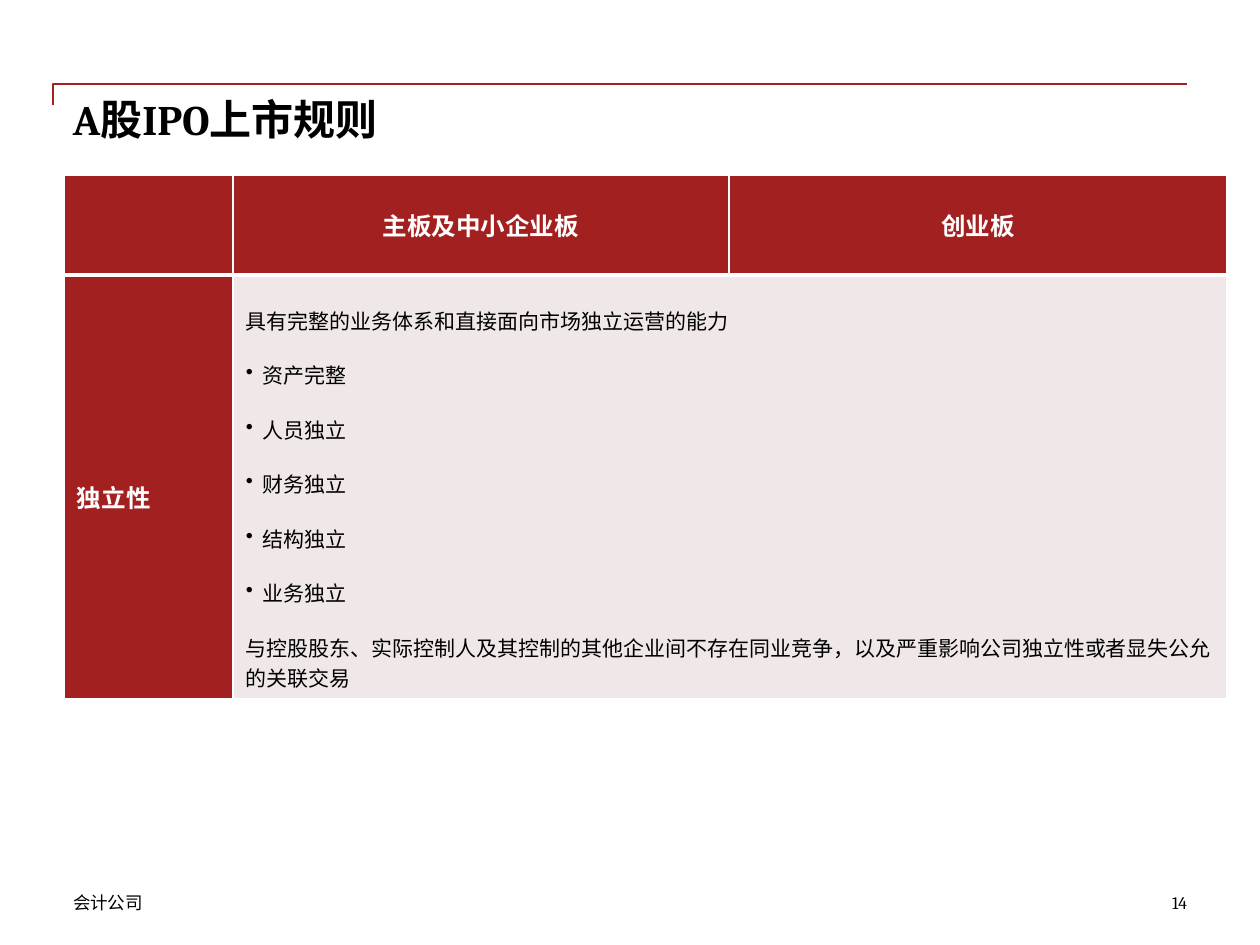
import pptx
import pptx.dml.color
import pptx.enum.text
import pptx.oxml
import pptx.oxml.ns
import pptx.util

PX = 914400 // 126
COLORS = {"red": "A32020", "pale": "F0E8E8", "white": "FFFFFF", "black": "000000"}
LATIN, ASIAN = "Cambria", "Noto Sans CJK SC"
ALIGN = pptx.enum.text.PP_ALIGN
ANCHOR = pptx.enum.text.MSO_ANCHOR
COLUMNS, ROWS = (169, 496, 498), (100, 424)
INDEPENDENCE = ("资产完整", "人员独立", "财务独立", "结构独立", "业务独立")


def px(count):
    return pptx.util.Emu(count * PX)


def rgb(name):
    return pptx.dml.color.RGBColor.from_string(COLORS[name])


def add_xml(parent, tag, content="", **attributes):
    values = "".join(f' {key}="{value}"' for key, value in attributes.items())
    namespace = pptx.oxml.ns.nsdecls("a")
    parent.append(pptx.oxml.parse_xml(f"<a:{tag} {namespace}{values}>{content}</a:{tag}>"))


def write(para, text, size=12, color="black", bold=False, align=ALIGN.LEFT, before=0, bullet=False):
    para.alignment = align
    para.space_before = px(before)
    if bullet:
        properties = para._p.get_or_add_pPr()
        properties.set("marL", str(px(17)))
        properties.set("indent", str(px(-17)))
        add_xml(properties, "buChar", char="•")
    span = para.add_run()
    span.text = text
    span.font.size = pptx.util.Pt(size)
    span.font.bold = bold
    span.font.color.rgb = rgb(color)
    span.font.name = LATIN
    add_xml(span.font._element, "ea", typeface=ASIAN)


def add_text(page, left, top, width, height, text, **style):
    box = page.shapes.add_textbox(px(left), px(top), px(width), px(height))
    frame = box.text_frame
    frame.word_wrap = True
    frame.margin_left = frame.margin_right = frame.margin_top = frame.margin_bottom = 0
    write(frame.paragraphs[0], text, **style)


def add_corner_rule(page):
    builder = page.shapes.build_freeform(53, 105, scale=PX)
    builder.add_line_segments([(53, 84), (1187, 84)], close=False)
    rule = builder.convert_to_shape()
    rule.shadow.inherit = False
    rule.fill.background()
    rule.line.color.rgb = rgb("red")
    rule.line.width = pptx.util.Pt(1)


def format_cell(cell, fill, bottom_width, margin_top=6):
    cell.margin_left = cell.margin_right = px(13)
    cell.margin_top, cell.margin_bottom = px(margin_top), px(6)
    properties = cell._tc.get_or_add_tcPr()
    line = f'<a:solidFill><a:srgbClr val="{COLORS["white"]}"/></a:solidFill>'
    for side in ("lnL", "lnR", "lnT", "lnB"):
        width = bottom_width if side == "lnB" else 1
        add_xml(properties, side, line, w=pptx.util.Pt(width))
    cell.fill.solid()
    cell.fill.fore_color.rgb = rgb(fill)


def add_rules_table(page):
    frame = page.shapes.add_table(2, 3, px(64), px(175), px(sum(COLUMNS)), px(sum(ROWS)))
    table = frame.table
    for column, width in zip(table.columns, COLUMNS):
        column.width = px(width)
    for row, height in zip(table.rows, ROWS):
        row.height = px(height)

    for index, heading in enumerate(("", "主板及中小企业板", "创业板")):
        cell = table.cell(0, index)
        format_cell(cell, "red", 3)
        cell.vertical_anchor = ANCHOR.MIDDLE
        if heading:
            write(cell.text_frame.paragraphs[0], heading, size=14, color="white",
                  bold=True, align=ALIGN.CENTER)

    label = table.cell(1, 0)
    format_cell(label, "red", 1, margin_top=204)
    write(label.text_frame.paragraphs[0], "独立性", size=14, color="white", bold=True)

    body = table.cell(1, 1)
    body.merge(table.cell(1, 2))
    format_cell(body, "pale", 1, margin_top=30)
    text = body.text_frame
    write(text.paragraphs[0], "具有完整的业务体系和直接面向市场独立运营的能力")
    for item in INDEPENDENCE:
        write(text.add_paragraph(), item, before=24, bullet=True)
    write(text.add_paragraph(), "与控股股东、实际控制人及其控制的其他企业间不存在同业竞争，"
          "以及严重影响公司独立性或者显失公允的关联交易", before=24)


def main():
    deck = pptx.Presentation()
    deck.slide_width, deck.slide_height = px(1260), px(945)
    page = deck.slides.add_slide(deck.slide_layouts[6])
    add_text(page, 73, 892, 357, 21, "会计公司", size=10)
    add_text(page, 73, 94, 1113, 126, "A股IPO上市规则", size=24, bold=True)
    add_corner_rule(page)
    add_text(page, 977, 892, 210, 21, "14", size=10, align=ALIGN.RIGHT)
    add_rules_table(page)
    deck.save("out.pptx")


if __name__ == "__main__":
    main()
